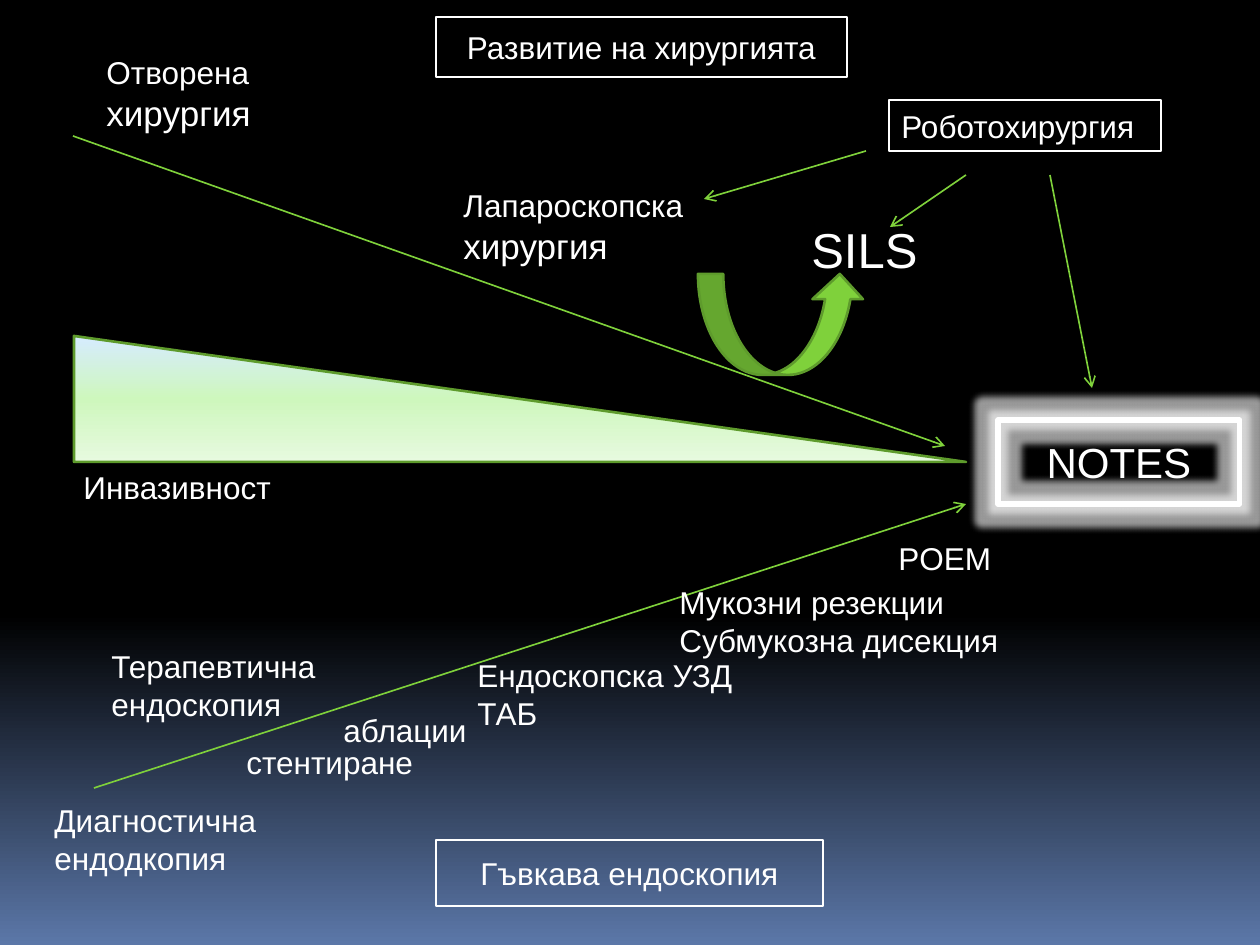
from lxml.etree import SubElement
from pptx import Presentation
from pptx.dml.color import RGBColor
from pptx.enum.shapes import MSO_CONNECTOR as Link, MSO_SHAPE as Shape
from pptx.enum.text import MSO_ANCHOR as Anchor, PP_ALIGN as Align
from pptx.oxml.ns import qn
from pptx.util import Pt

SCALE = 914400 / 126
WHITE = RGBColor(0xFF, 0xFF, 0xFF)
GREEN = RGBColor(0x7F, 0xD1, 0x3B)
DARK_GREEN = RGBColor(0x5E, 0x9B, 0x2C)
BLACK = RGBColor(0, 0, 0)
BLUE = RGBColor(0x5B, 0x77, 0xA8)
PALE_BLUE = RGBColor(0xD6, 0xEC, 0xFF)
PALE_GREEN = RGBColor(0xCE, 0xF7, 0xBD)
MINT = RGBColor(0xE7, 0xFA, 0xDF)

NIGHT = [(0, BLACK), (65, BLACK), (100, BLUE)]
WEDGE = [(0, PALE_BLUE), (50, PALE_GREEN), (100, MINT)]

LINES = [
    ((73, 462), (966, 462), False),
    ((73, 136), (945, 446), True),
    ((94, 788), (966, 504), True),
    ((866, 151), (704, 199), True),
    ((966, 175), (890, 227), True),
    ((1050, 175), (1092, 388), True),
]
LABELS = [
    ((799, 213, 166, 72), ["SILS"], [28]),
    ((451, 180, 253, 93), ["Лапароскопска", "хирургия"], [18, 20]),
    ((94, 47, 181, 93), ["Отворена", "хирургия"], [18, 20]),
    ((71, 462, 258, 50), ["Инвазивност"], [18]),
    ((42, 795, 243, 89), ["Диагностична", "ендодкопия"], [18, 18]),
    ((99, 641, 232, 89), ["Терапевтична", "ендоскопия"], [18, 18]),
    ((234, 737, 194, 50), ["стентиране"], [18]),
    ((331, 705, 154, 50), ["аблации"], [18]),
    ((465, 650, 286, 89), ["Ендоскопска УЗД", "ТАБ"], [18, 18]),
    ((667, 577, 355, 89), ["Мукозни резекции", "Субмукозна дисекция"], [18, 18]),
    ((886, 533, 120, 50), ["POEM"], [18]),
]
FRAMES = [
    ((998, 420, 242, 84), "NOTES", 24, 3, Align.CENTER),
    ((436, 17, 411, 60), "Развитие на хирургията", 18, 1.5, Align.CENTER),
    ((436, 840, 387, 66), "Гъвкава ендоскопия", 18, 1.5, Align.CENTER),
    ((889, 100, 272, 51), "Роботохирургия", 18, 1, Align.LEFT),
]


def px(*values):
    return [round(value * SCALE) for value in values]


def write(box, texts, sizes, align=Align.LEFT, anchor=Anchor.TOP, wrap=True):
    frame = box.text_frame
    frame.word_wrap = wrap
    frame.vertical_anchor = anchor
    for index, (text, size) in enumerate(zip(texts, sizes)):
        para = frame.add_paragraph() if index else frame.paragraphs[0]
        para.alignment = align
        span = para.add_run()
        span.text = text
        span.font.name = "Arial"
        span.font.size = Pt(size)
        span.font.color.rgb = WHITE


def paint_gradient(fill, owner, stops):
    fill.gradient()
    fill.gradient_angle = 270
    stop_list = next(owner.iter(qn("a:gsLst")))
    for old in list(stop_list):
        stop_list.remove(old)
    for position, color in stops:
        stop = SubElement(stop_list, qn("a:gs"), pos=str(position * 1000))
        SubElement(stop, qn("a:srgbClr"), val=str(color))


def add_figure(page, kind, place, color, weight):
    figure = page.shapes.add_shape(kind, *px(*place))
    figure.shadow.inherit = False
    figure.line.color.rgb = color
    figure.line.width = Pt(weight)
    return figure


def add_line(page, start, end, arrow):
    line = page.shapes.add_connector(Link.STRAIGHT, *px(*start, *end))
    line.line.color.rgb = GREEN
    line.line.width = Pt(0.94)
    if arrow:
        SubElement(line.line._get_or_add_ln(), qn("a:tailEnd"), type="arrow")
    SubElement(line._element.spPr, qn("a:effectLst"))


def add_glow(figure, radius, opacity):
    effects = figure._element.spPr.find(qn("a:effectLst"))
    glow = SubElement(effects, qn("a:glow"), rad=str(Pt(radius)))
    color = SubElement(glow, qn("a:srgbClr"), val=str(WHITE))
    SubElement(color, qn("a:alpha"), val=str(opacity * 1000))


def main():
    deck = Presentation()
    deck.slide_width, deck.slide_height = px(1260, 945)
    page = deck.slides.add_slide(deck.slide_layouts[6])
    paint_gradient(page.background.fill, page._element, NIGHT)

    for start, end, arrow in LINES:
        add_line(page, start, end, arrow)

    curve = add_figure(page, Shape.CURVED_UP_ARROW, (698, 274, 167, 101), DARK_GREEN, 1.5)
    curve.fill.solid()
    curve.fill.fore_color.rgb = GREEN

    for place, texts, sizes in LABELS:
        write(page.shapes.add_textbox(*px(*place)), texts, sizes)

    for place, text, size, weight, align in FRAMES:
        frame = add_figure(page, Shape.RECTANGLE, place, WHITE, weight)
        frame.fill.background()
        write(frame, [text], [size], align=align, anchor=Anchor.MIDDLE)
        if text == "NOTES":
            add_glow(frame, 8, 60)

    wedge = add_figure(page, Shape.RIGHT_TRIANGLE, (74, 336, 892, 126), DARK_GREEN, 1.5)
    paint_gradient(wedge.fill, wedge._element, WEDGE)
    deck.save("out.pptx")


if __name__ == "__main__":
    main()
